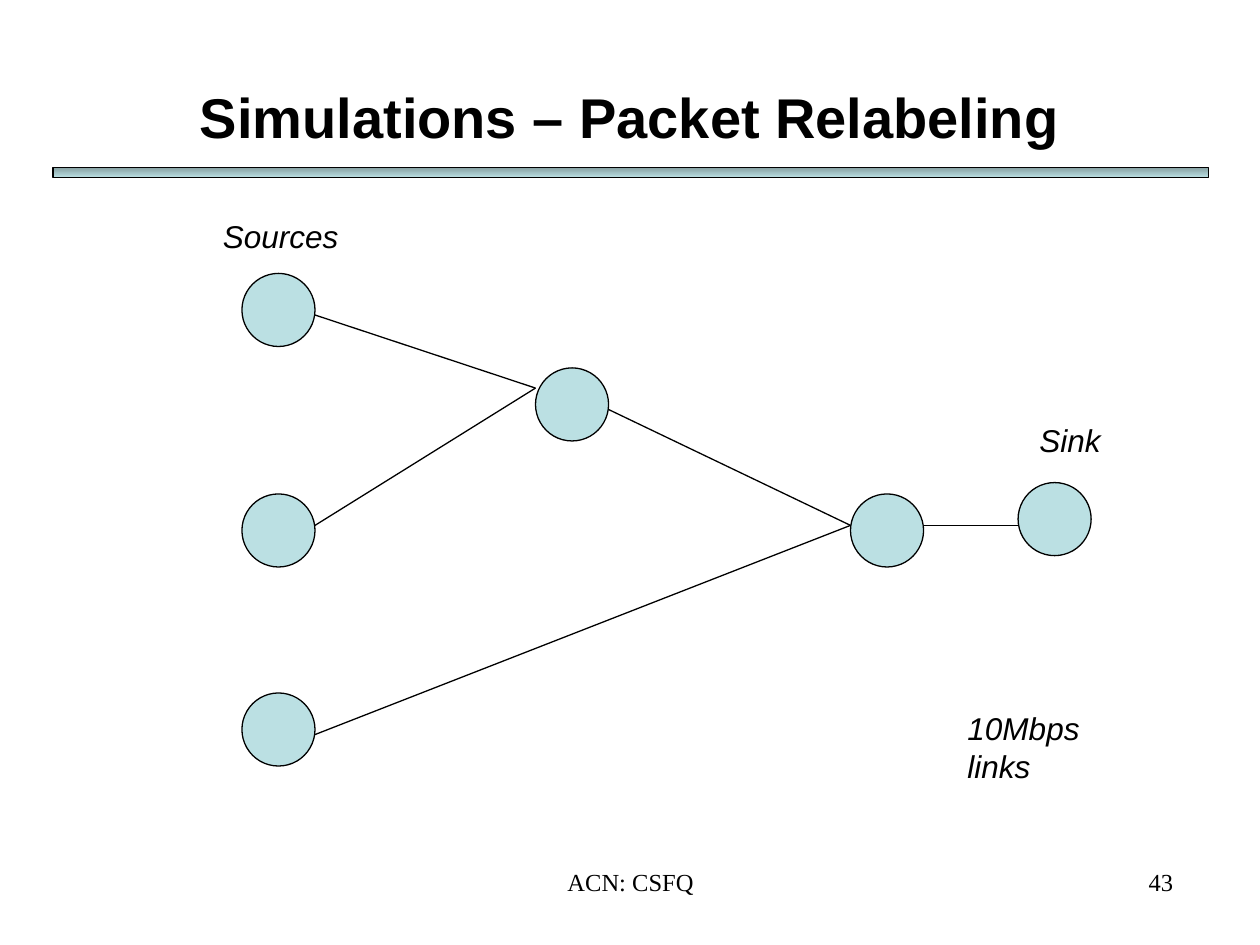
from lxml import etree
from pptx import Presentation
from pptx.dml.color import RGBColor
from pptx.enum.shapes import MSO_CONNECTOR, MSO_SHAPE
from pptx.enum.text import MSO_ANCHOR, PP_ALIGN
from pptx.oxml import parse_xml
from pptx.oxml.ns import nsdecls, qn
from pptx.util import Inches, Pt

COLORS = {"ink": "000000", "node": "BBE0E3", "bar_top": "86A0A2", "shadow": "808080"}
TITLE = "Simulations – Packet Relabeling"
TITLE_BOX = (0.5, 0.3, 9, 1.25)
BAR_BOX = (0.42, 1.33, 9.17, 0.08)
NODE_SIZE = 0.58
NODES = [(1.92, 2.17), (1.92, 3.92), (1.92, 5.5), (4.25, 2.92), (6.75, 3.92), (8.08, 3.83)]
RELAY_IN = (4.25, 3.08)
ROUTER_IN = (6.75, 4.17)
LINKS = [
    ((2.5, 2.5), RELAY_IN),
    ((2.5, 4.17), RELAY_IN),
    ((2.5, 5.83), ROUTER_IN),
    ((4.83, 3.25), ROUTER_IN),
    ((7.33, 4.17), (8.08, 4.17)),
]
LABELS = [
    (["Sources"], (1.67, 1.67, 1.12, 0.4)),
    (["Sink"], (8.15, 3.29, 0.69, 0.4)),
    (["10Mbps", "links"], (7.58, 5.58, 1.09, 0.7)),
]
FOOTERS = [
    ("ACN: CSFQ", (3.42, 6.83, 3.17, 0.5), PP_ALIGN.CENTER),
    ("43", (7.33, 6.83, 2.08, 0.5), PP_ALIGN.RIGHT),
]


def color(name):
    return RGBColor.from_string(COLORS[name])


def add_text(slide, lines, box, size, font="Arial", align=PP_ALIGN.LEFT,
             bold=False, italic=False, wrap=True, anchor=MSO_ANCHOR.TOP):
    frame = slide.shapes.add_textbox(*map(Inches, box)).text_frame
    frame.word_wrap = wrap
    frame.vertical_anchor = anchor
    for index, line in enumerate(lines):
        paragraph = frame.add_paragraph() if index else frame.paragraphs[0]
        paragraph.alignment = align
        run = paragraph.add_run()
        run.text = line
        run.font.name = font
        run.font.size = Pt(size)
        run.font.bold = bold
        run.font.italic = italic
        run.font.color.rgb = color("ink")
    return frame


def add_text_shadow(run):
    effects = parse_xml(
        f'<a:effectLst {nsdecls("a")}><a:outerShdw dist="38100" dir="2700000">'
        f'<a:srgbClr val="{COLORS["shadow"]}"/></a:outerShdw></a:effectLst>'
    )
    run.font._element.find(qn("a:solidFill")).addnext(effects)


def add_outlined(slide, preset, box):
    shape = slide.shapes.add_shape(preset, *map(Inches, box))
    shape.shadow.inherit = False
    shape.line.color.rgb = color("ink")
    shape.line.width = Pt(0.75)
    return shape


def add_link(slide, start, end):
    link = slide.shapes.add_connector(MSO_CONNECTOR.STRAIGHT, *map(Inches, start + end))
    link.line.color.rgb = color("ink")
    link.line.width = Pt(0.75)
    etree.SubElement(link._element.spPr, qn("a:effectLst"))


def main():
    deck = Presentation()
    deck.slide_width, deck.slide_height = Inches(10), Inches(7.5)
    slide = deck.slides.add_slide(deck.slide_layouts[6])

    for text, box, align in FOOTERS:
        add_text(slide, [text], box, 14, "Times New Roman", align)

    title = add_text(slide, [TITLE], TITLE_BOX, 32, align=PP_ALIGN.CENTER,
                     bold=True, anchor=MSO_ANCHOR.MIDDLE)
    add_text_shadow(title.paragraphs[0].runs[0])

    bar = add_outlined(slide, MSO_SHAPE.RECTANGLE, BAR_BOX)
    bar.fill.gradient()
    bar.fill.gradient_angle = 270
    for stop, name, position in zip(bar.fill.gradient_stops, ("bar_top", "node"), (0, 1)):
        stop.color.rgb = color(name)
        stop.position = position

    for left, top in NODES:
        node = add_outlined(slide, MSO_SHAPE.OVAL, (left, top, NODE_SIZE, NODE_SIZE))
        node.fill.solid()
        node.fill.fore_color.rgb = color("node")

    for start, end in LINKS:
        add_link(slide, start, end)

    for lines, box in LABELS:
        add_text(slide, lines, box, 18, italic=True, wrap=False)

    deck.save("out.pptx")


if __name__ == "__main__":
    main()
